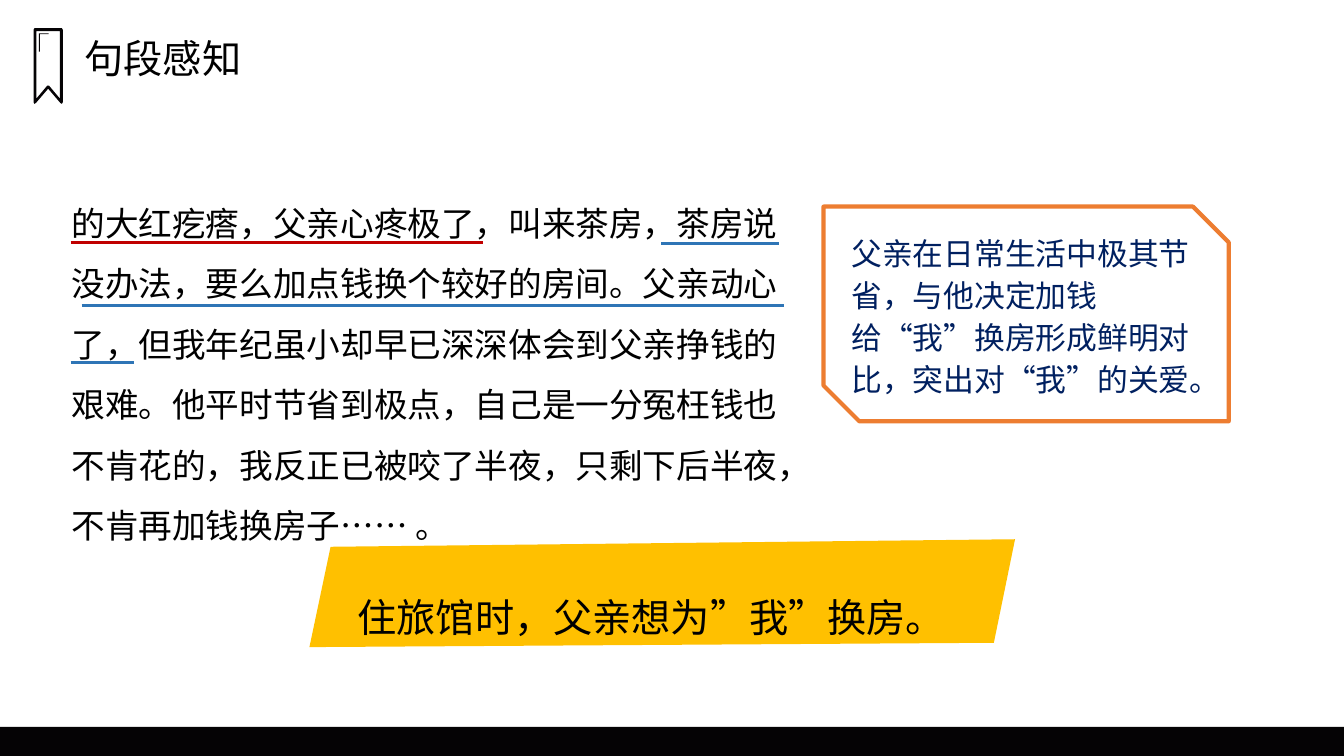
import pptx
import pptx.dml.color
import pptx.enum.shapes
import pptx.enum.text
import pptx.oxml
import pptx.oxml.ns
import pptx.util

SHAPES = pptx.enum.shapes.MSO_SHAPE
ANCHORS = pptx.enum.text.MSO_ANCHOR
WIDTH, HEIGHT = pptx.util.Inches(13.33), pptx.util.Inches(7.5)
COLUMNS, ROWS = 160, 90
INK, RED, BLUE = "000000", "C00000", "2E75B6"

# Underlines: first column, last column, row within the passage, colour
UNDERLINES = [
    (1.08, 50.16, 7.8, RED),
    (71.4, 85.44, 7.92, BLUE),
    (2.4, 86.04, 15.24, BLUE),
    (1.08, 8.64, 22.08, BLUE),
]

# Outlines in percent of their own box
BOOKMARK = [
    [(3, 0), (97, 0), (100, 2), (100, 98), (97, 100), (92, 99),
     (50, 80), (8, 99), (3, 100), (0, 98), (0, 2)],
    [(10, 4), (90, 4), (90, 93), (53, 76), (47, 76), (10, 93)],
    [(18, 7), (52, 7), (52, 8), (22, 8), (22, 31), (18, 31)],
]
RIBBON = [[(100, 0), (97, 96), (0, 100), (3, 7)]]


def color(hex_value):
    return pptx.dml.color.RGBColor.from_string(hex_value)


def across(columns):
    return round(columns * WIDTH / COLUMNS)


def down(rows):
    return round(rows * HEIGHT / ROWS)


def place(box):
    left, top, width, height = box
    return across(left), down(top), across(width), down(height)


def paint(part, fill=None, line=None, weight=0):
    part.shadow.inherit = False
    if fill:
        part.fill.solid()
        part.fill.fore_color.rgb = color(fill)
    else:
        part.fill.background()
    if line:
        part.line.color.rgb = color(line)
        part.line.width = pptx.util.Pt(weight)
    else:
        part.line.fill.background()


def write(part, words, size, ink=INK, spacing=1.0, wrap=True, anchor=ANCHORS.TOP):
    frame = part.text_frame
    frame.text = words
    frame_format = {
        "word_wrap": wrap,
        "vertical_anchor": anchor,
        "auto_size": pptx.enum.text.MSO_AUTO_SIZE.SHAPE_TO_FIT_TEXT,
    }
    paragraph_format = {
        "alignment": pptx.enum.text.PP_ALIGN.LEFT,
        "line_spacing": spacing,
        "space_before": pptx.util.Pt(0),
    }
    font_format = {"name": "Arial", "size": pptx.util.Pt(size)}
    paragraph = frame.paragraphs[0]
    font = paragraph.runs[0].font
    for target, values in ((frame, frame_format), (paragraph, paragraph_format),
                           (font, font_format)):
        for key, value in values.items():
            setattr(target, key, value)
    font.color.rgb = color(ink)


def fit(placeholder, box):
    for key, value in zip(("left", "top", "width", "height"), place(box)):
        setattr(placeholder, key, value)


def outline(slide, box, contours, fill):
    left, top, width, height = place(box)
    first, *others = contours
    builder = slide.shapes.build_freeform(*first[0], scale=(width / 100, height / 100))
    builder.add_line_segments(first[1:], close=True)
    for contour in others:
        builder.move_to(*contour[0])
        builder.add_line_segments(contour[1:], close=True)
    paint(builder.convert_to_shape(left, top), fill)


def underline(slide, start, end, row, ink):
    rule = slide.shapes.add_connector(
        pptx.enum.shapes.MSO_CONNECTOR.STRAIGHT,
        across(start), down(row), across(end), down(row))
    rule.line.color.rgb = color(ink)
    rule.line.width = pptx.util.Pt(2.25)
    rule._element.spPr.append(pptx.oxml.parse_xml(
        "<a:effectLst %s/>" % pptx.oxml.ns.nsdecls("a")))


def add_footer(slide, box):
    bar = slide.shapes.add_shape(SHAPES.RECTANGLE, *place(box))
    paint(bar, "050305")


def add_heading(slide, box):
    left, top, width, height = box
    outline(slide, (left, top, 3.48, height), BOOKMARK, "050305")
    fit(slide.shapes.title, (left + 4.88, top + 0.12, width - 4.88, 6.84))
    write(slide.shapes.title, "句段感知", 28, wrap=False)


def add_passage(slide, box):
    passage = slide.placeholders[1]
    fit(passage, box)
    write(passage, "的大红疙瘩，父亲心疼极了，叫来茶房，茶房说没办法，要么加点钱换个较好的房间。"
          "父亲动心了，但我年纪虽小却早已深深体会到父亲挣钱的艰难。他平时节省到极点，"
          "自己是一分冤枉钱也不肯花的，我反正已被咬了半夜，只剩下后半夜，"
          "不肯再加钱换房子…… 。", 24, spacing=1.5)
    # Plain paragraph: no bullet, no hanging indent
    properties = passage.text_frame.paragraphs[0]._p.get_or_add_pPr()
    properties.set("marL", "0")
    properties.set("indent", "0")
    properties.append(pptx.oxml.parse_xml(
        "<a:buNone %s/>" % pptx.oxml.ns.nsdecls("a")))
    left, top = box[:2]
    for start, end, row, ink in UNDERLINES:
        underline(slide, left + start, left + end, top + row, ink)


def add_comment(slide, box):
    comment = slide.shapes.add_shape(SHAPES.SNIP_2_DIAG_RECTANGLE, *place(box))
    paint(comment, line="ED7D31", weight=3)
    write(comment, "父亲在日常生活中极其节省，与他决定加钱给“我”换房形成鲜明对比，突出对“我”的关爱。",
          22, "002060", pptx.util.Pt(30), anchor=ANCHORS.MIDDLE)


def add_banner(slide, box):
    left, top, width, height = box
    outline(slide, box, RIBBON, "FFC000")
    summary = slide.shapes.add_textbox(
        *place((left + 4.56, top + 3, width - 12.12, height - 4.08)))
    write(summary, "住旅馆时，父亲想为”我”换房。", 28, spacing=1.5)


def main():
    deck = pptx.Presentation()
    deck.slide_width, deck.slide_height = WIDTH, HEIGHT
    slide = deck.slides.add_slide(deck.slide_layouts[1])
    add_footer(slide, (0, 86.52, COLUMNS, 3.48))
    add_heading(slide, (4, 3.36, 26.12, 9))
    add_passage(slide, (7.32, 21.12, 88.56, 44.88))
    add_comment(slide, (98.04, 24.6, 48.24, 25.56))
    add_banner(slide, (36.84, 64.2, 84, 12.84))
    deck.save("out.pptx")


if __name__ == "__main__":
    main()
